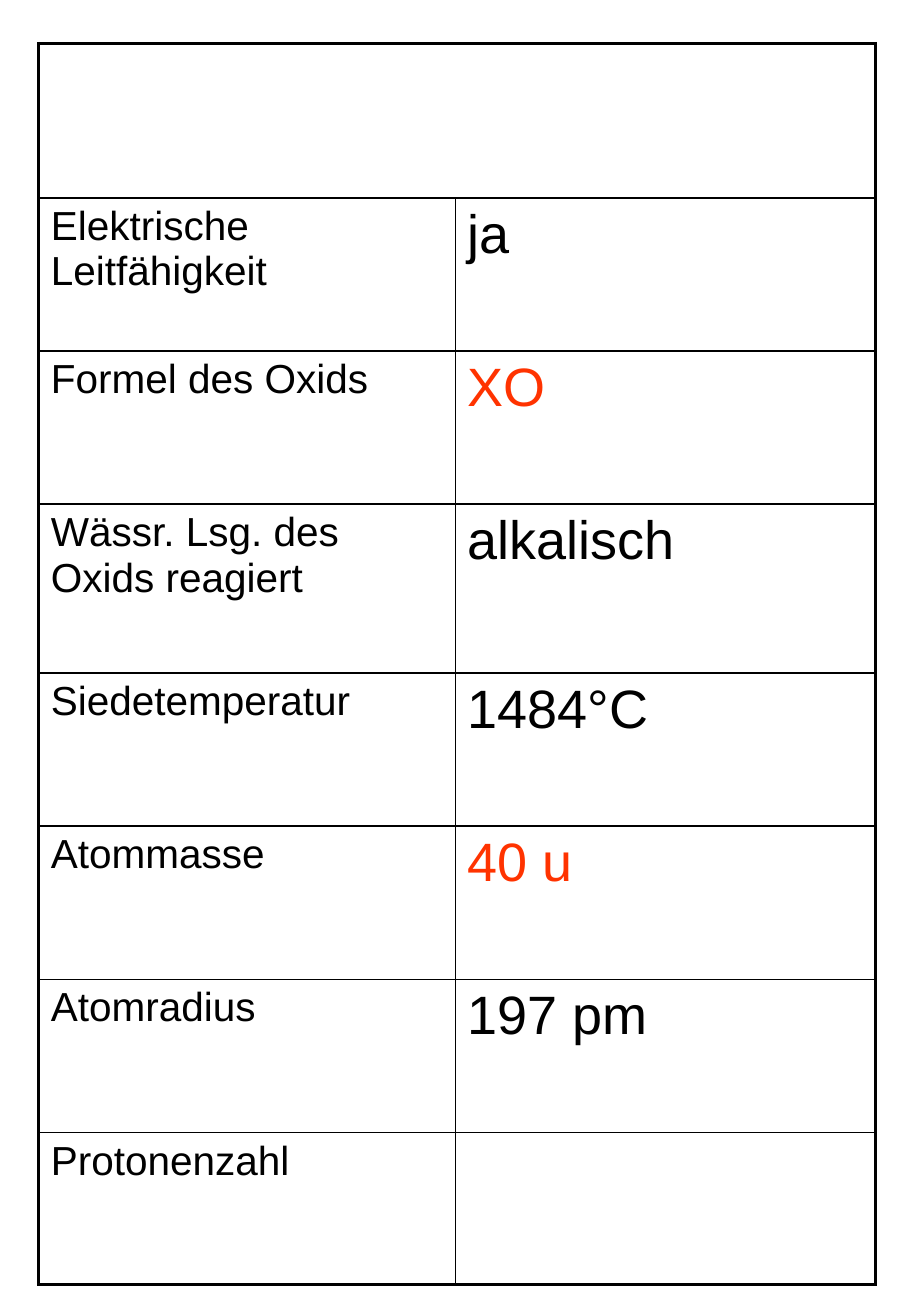
from lxml.etree import SubElement
from pptx import Presentation
from pptx.dml.color import RGBColor
from pptx.oxml.ns import qn
from pptx.util import Cm, Pt

BLACK, RED = "000000", "FF3300"
THIN, THICK = Pt(1), Pt(2.25)
COLS = [8.71, 8.79]
ROWS = [3.23, 3.2, 3.2, 3.53, 3.2, 3.2, 3.2, 3.18]
FACTS = [
    ("Elektrische Leitfähigkeit", "ja", BLACK),
    ("Formel des Oxids", "XO", RED),
    ("Wässr. Lsg. des Oxids reagiert", "alkalisch", BLACK),
    ("Siedetemperatur", "1484°C", BLACK),
    ("Atommasse", "40 u", RED),
    ("Atomradius", "197 pm", BLACK),
    ("Protonenzahl", "", BLACK),
]


def color(code):
    return RGBColor.from_string(code)


def border(cell, edges):
    props = cell._tc.get_or_add_tcPr()
    for side, thick in edges.items():
        line = SubElement(props, qn(f"a:ln{side}"), w=str(THICK if thick else THIN))
        fill = SubElement(line, qn("a:solidFill"))
        SubElement(fill, qn("a:srgbClr"), val=BLACK)


def write(cell, text, size, code):
    cell.text = text
    font = cell.text_frame.paragraphs[0].font
    font.name = "Arial"
    font.size = Pt(size)
    font.bold = False
    font.color.rgb = color(code)


def card(slide, left, top, width, height):
    shape = slide.shapes.add_table(len(ROWS), len(COLS), left, top, width, height)
    table = shape.table
    table.first_row = table.horz_banding = False
    for col, size in zip(table.columns, COLS):
        col.width = Cm(size)
    for row, size in zip(table.rows, ROWS):
        row.height = Cm(size)
    table.cell(0, 0).merge(table.cell(0, 1))
    for r in range(len(ROWS)):
        for c in range(len(COLS)):
            cell = table.cell(r, c)
            border(cell, {
                "L": c == 0,
                "R": c == len(COLS) - 1 or r == 0,
                "T": r == 0,
                "B": r == len(ROWS) - 1,
            })
            cell.fill.background()
    for r, (label, value, code) in enumerate(FACTS, 1):
        write(table.cell(r, 0), label, 24, BLACK)
        if value:
            write(table.cell(r, 1), value, 32, code)


def main():
    deck = Presentation()
    deck.slide_width, deck.slide_height = Cm(19.05), Cm(27.51)
    slide = deck.slides.add_slide(deck.slide_layouts[6])
    card(slide, Cm(0.81), Cm(0.91), Cm(sum(COLS)), Cm(sum(ROWS)))
    deck.save("out.pptx")


if __name__ == "__main__":
    main()
